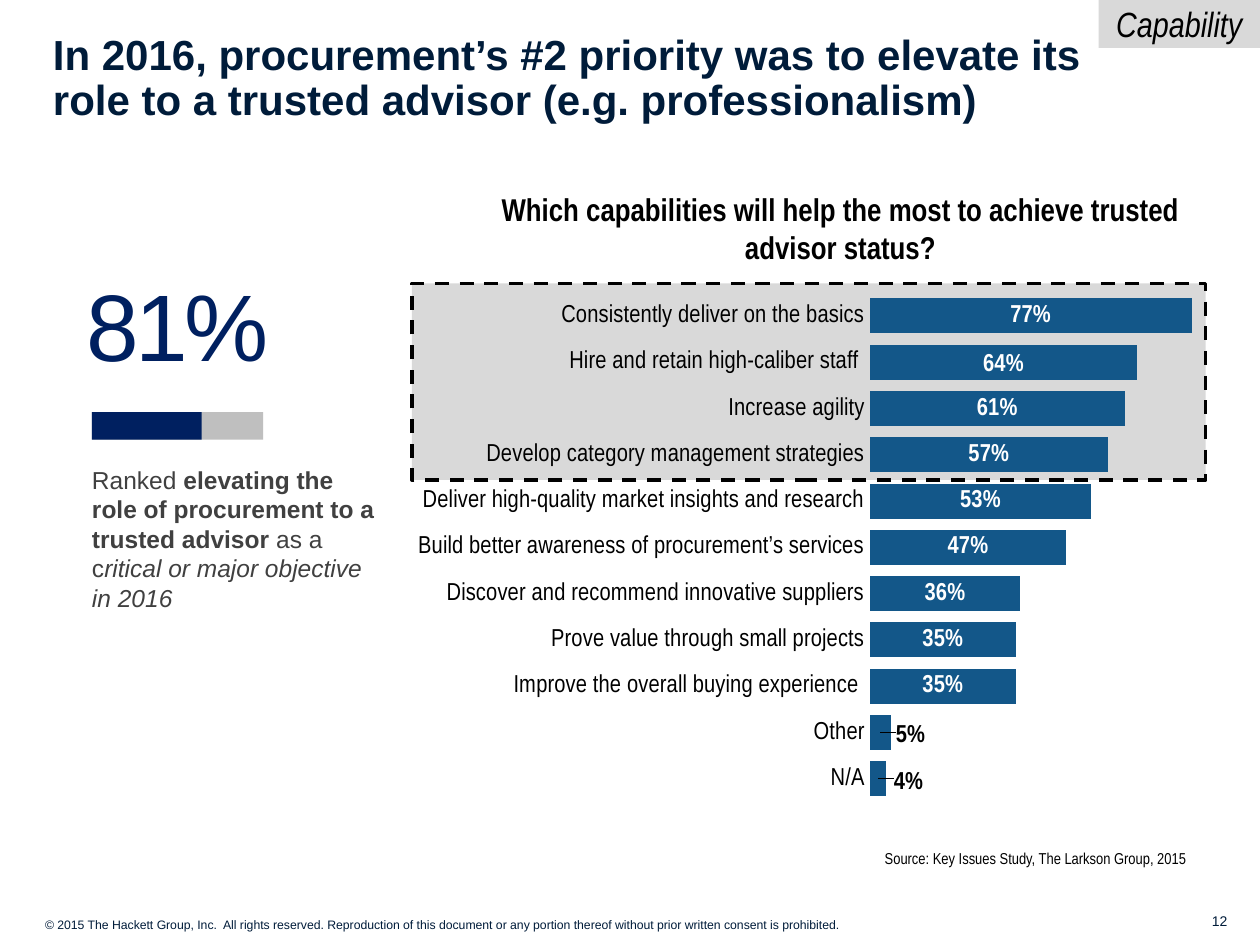
from lxml import etree
from pptx import Presentation
from pptx.chart.data import CategoryChartData
from pptx.dml.color import RGBColor
from pptx.enum.chart import XL_CHART_TYPE as Chart, XL_LABEL_POSITION as Pos
from pptx.enum.chart import XL_TICK_MARK as Tick
from pptx.enum.dml import MSO_LINE_DASH_STYLE as Dash
from pptx.enum.shapes import MSO_SHAPE as Shape
from pptx.enum.text import MSO_ANCHOR as Anchor, MSO_AUTO_SIZE as Fit, PP_ALIGN as Align
from pptx.oxml import parse_xml
from pptx.oxml.ns import nsdecls, qn
from pptx.util import Inches, Pt

COLORS = {
    "title": "001C3A", "navy": "002060", "bar": "135789", "gray": "BFBFBF",
    "band": "D9D9D9", "body": "404040", "black": "000000", "white": "FFFFFF",
}
NARROW = "Arial Narrow"
ROWS = [
    ("Consistently deliver on the basics", 0.77),
    ("Hire and retain high-caliber staff ", 0.64),
    ("Increase agility", 0.61),
    ("Develop category management strategies", 0.57),
    ("Deliver high-quality market insights and research", 0.53),
    ("Build better awareness of procurement’s services", 0.47),
    ("Discover and recommend innovative suppliers", 0.36),
    ("Prove value through small projects", 0.35),
    ("Improve the overall buying experience ", 0.35),
    ("Other", 0.05),
    ("N/A", 0.04),
]


def rgb(name):
    return RGBColor.from_string(COLORS[name])


def style(font, size, color="black", face=NARROW, bold=False, italic=False):
    font.size, font.name = Pt(size), face
    font.bold, font.italic = bold, italic
    font.color.rgb = rgb(color)


def write(frame, runs, size, color="black", face=NARROW, align=Align.LEFT,
          anchor=Anchor.TOP, wrap=True, pad=None):
    """Fill the first paragraph with (text, bold, italic) runs and return it."""
    frame.word_wrap = wrap
    frame.auto_size = Fit.NONE
    frame.vertical_anchor = anchor
    if pad:
        (frame.margin_left, frame.margin_top,
         frame.margin_right, frame.margin_bottom) = map(Inches, pad)
    para = frame.paragraphs[0]
    para.alignment = align
    for text, bold, italic in runs:
        run = para.add_run()
        run.text = text
        style(run.font, size, color, face, bold, italic)
    return para


def add_text(slide, box, runs, size, **look):
    frame = slide.shapes.add_textbox(*map(Inches, box)).text_frame
    return write(frame, runs, size, **look)


def add_rect(slide, box, color):
    rect = slide.shapes.add_shape(Shape.RECTANGLE, *map(Inches, box))
    rect.shadow.inherit = False
    rect.fill.solid()
    rect.fill.fore_color.rgb = rgb(color)
    rect.line.fill.background()
    return rect


def layout(x, y, size=None):
    """Make a manual layout: an offset, or an inner plot box if size is given."""
    parts = [("x", x), ("y", y)]
    if size:
        parts = [("layoutTarget", "inner"), ("xMode", "edge"), ("yMode", "edge"),
                 *parts, ("w", size[0]), ("h", size[1])]
    root = parse_xml(f"<c:layout {nsdecls('c')}><c:manualLayout/></c:layout>")
    for tag, val in parts:
        etree.SubElement(root[0], qn(f"c:{tag}")).set("val", str(val))
    return root


def add_title(slide, box):
    title = slide.shapes.title
    title.left, title.top, title.width, title.height = map(Inches, box)
    text = ("In 2016, procurement’s #2 priority was to elevate its "
            "role to a trusted advisor (e.g. professionalism)")
    para = write(title.text_frame, [(text, True, False)], 24, "title", "Arial",
                 anchor=Anchor.MIDDLE, pad=(0.08, 0.04, 0.08, 0.04))
    para.line_spacing = 0.9


def add_tag(slide, box):
    tag = add_rect(slide, box, "band")
    write(tag.text_frame, [("Capability", False, True)], 20,
          align=Align.CENTER, anchor=Anchor.MIDDLE, wrap=False)


def add_stat(slide, box):
    """Big figure, progress bar and caption, stacked in the box."""
    x, y, w, h = box
    para = add_text(slide, (x, y, 1.64, 1.39), [("81%", False, False)], 54,
                    color="navy", face="Arial", align=Align.CENTER,
                    anchor=Anchor.MIDDLE, pad=(0, 0, 0, 0))
    para.space_after = Pt(6)
    para.runs[0].font._element.set("spc", "-220")
    for width, color in ((1.36, "gray"), (0.87, "navy")):
        add_rect(slide, (x + 0.14, y + 1.4, width, 0.22), color)
    runs = [
        ("Ranked ", False, False),
        ("elevating the role of procurement to a trusted advisor", True, False),
        (" as a c", False, False),
        ("ritical or major objective in 2016", False, True),
    ]
    para = add_text(slide, (x + 0.11, y + 1.79, w - 0.11, h - 1.79), runs, 14,
                    color="body", face="Arial", pad=(0.03, 0.03, 0.03, 0.06))
    para.space_after = Pt(4.5)


def add_bars(slide, box):
    data = CategoryChartData(number_format="0%")
    data.categories = [name for name, _ in ROWS]
    data.add_series("Series 1", [val for _, val in ROWS])
    chart = slide.shapes.add_chart(
        Chart.BAR_STACKED, *map(Inches, box), data).chart
    chart.has_legend = chart.has_title = False
    style(chart.font, 18)

    cats, vals = chart.category_axis, chart.value_axis
    cats.reverse_order = True
    cats.major_tick_mark = cats.minor_tick_mark = Tick.NONE
    cats.format.line.fill.background()
    style(cats.tick_labels.font, 14)
    vals.minimum_scale, vals.maximum_scale = 0, 1
    vals.has_major_gridlines = vals.visible = False

    plot = chart.plots[0]
    plot.gap_width, plot.overlap = 32, 100
    plot.vary_by_categories = False
    bars = plot.series[0]
    bars.format.fill.solid()
    bars.format.fill.fore_color.rgb = rgb("bar")
    labels = bars.data_labels
    labels.show_value = True
    labels.position = Pos.CENTER
    labels.number_format, labels.number_format_is_linked = "0%", False
    style(labels.font, 14, "white", bold=True)

    moved = {1: ("white", 0, 0.005), 9: ("black", 0.031, 0.005),
             10: ("black", 0.031, 0.007)}
    for idx, (color, _, _) in moved.items():
        label = bars.points[idx].data_label
        style(label.font, 14, color, bold=True)
        label.position = Pos.CENTER
    for node in bars._element.iter(qn("c:dLbl")):
        idx = node.find(qn("c:idx"))
        _, dx, dy = moved[int(idx.get("val"))]
        idx.addnext(layout(dx, dy))

    area = chart._chartSpace.chart.plotArea
    for old in area.findall(qn("c:layout")):
        area.remove(old)
    area.insert(0, layout(0.56, 0.092, (0.425, 0.82)))


def add_survey(slide, box):
    """Highlight band, bar chart, heading and source line."""
    x, y, w, h = box
    band = add_rect(slide, (x + 0.74, y + 0.79, 6.3, 1.56), "band")
    band.line.color.rgb = rgb("black")
    band.line.width = Pt(2)
    band.line.dash_style = Dash.DASH
    add_bars(slide, (x, y + 0.41, w, h - 0.55))
    head = "Which capabilities will help the most to achieve trusted advisor status?"
    add_text(slide, (x + 1.18, y, 5.92, 0.71), [(head, True, False)], 18,
             align=Align.CENTER)
    source = "Source: Key Issues Study, The Larkson Group, 2015"
    add_text(slide, (x + 4.37, y + h - 0.25, 2.61, 0.25),
             [(source, False, False)], 9, align=Align.RIGHT, wrap=False)


def add_footer(slide, box):
    x, y, w, h = box
    note = ("© 2015 The Hackett Group, Inc.  All rights reserved. Reproduction of this "
            "document or any portion thereof without prior written consent is prohibited.")
    add_text(slide, (x, y + 0.04, 7.53, h - 0.04), [(note, False, False)], 7,
             color="title", face="Arial")
    add_text(slide, (x + w - 1, y, 1, h), [("12", False, False)], 8,
             color="title", face="Arial", align=Align.RIGHT)


def main():
    deck = Presentation()
    deck.slide_width, deck.slide_height = Inches(10), Inches(7.5)
    slide = deck.slides.add_slide(deck.slide_layouts[5])
    add_title(slide, (0.34, 0.16, 8.69, 0.94))
    add_stat(slide, (0.59, 1.87, 2.43, 3.52))
    add_survey(slide, (2.53, 1.46, 7.81, 5.48))
    add_tag(slide, (8.72, 0, 1.28, 0.38))
    add_footer(slide, (0.26, 7.19, 9.58, 0.26))
    deck.save("out.pptx")


if __name__ == "__main__":
    main()
